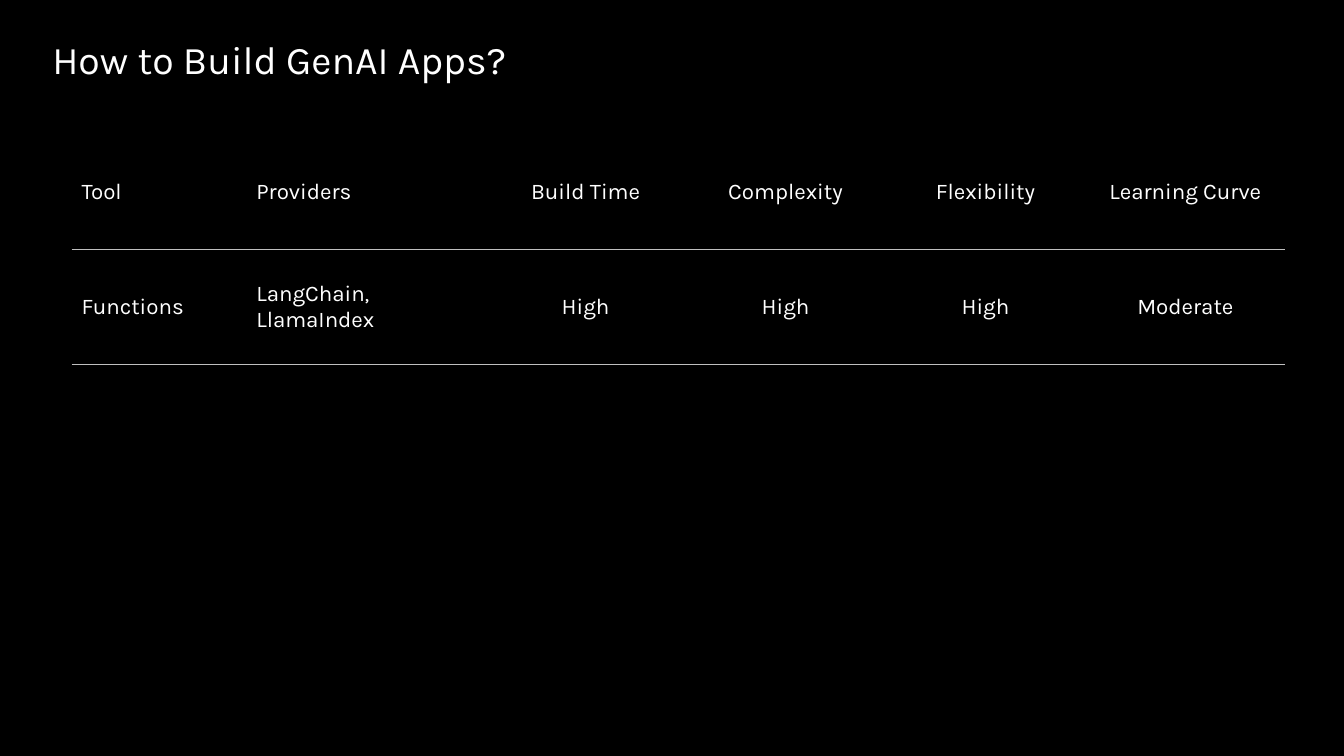
from lxml.etree import SubElement
from pptx import Presentation
from pptx.dml.color import RGBColor
from pptx.enum.text import MSO_ANCHOR, PP_ALIGN
from pptx.oxml.ns import qn
from pptx.util import Inches, Pt

BLACK = RGBColor(0x00, 0x00, 0x00)
WHITE = RGBColor(0xFF, 0xFF, 0xFF)
RULE_GRAY = RGBColor(0xBF, 0xBF, 0xBF)
FONT = "Karla"
NO_GRID_STYLE = "{2D5ABB26-0587-4C30-8999-92F81FD0307C}"

TOOL_ROWS = [
    ["Tool", "Providers", "Build Time", "Complexity", "Flexibility", "Learning Curve"],
    ["Functions", "LangChain, LlamaIndex", "High", "High", "High", "Moderate"],
]
ROW_COUNT = 5
LEFT_ALIGNED = 2
COLUMN_SHARES = [1.73, 2.37] + [1.98] * 4


def write_text(frame, text, size=16, color=WHITE, align=PP_ALIGN.LEFT):
    """Put one formatted line of text into a text frame."""
    paragraph = frame.paragraphs[0]
    paragraph.alignment = align
    run = paragraph.add_run()
    run.text = text
    run.font.name = FONT
    run.font.size = Pt(size)
    run.font.color.rgb = color


def add_rule(cell, side, color=RULE_GRAY, width=0.5):
    """Draw a border on one side of a cell, side being lnT or lnB."""
    properties = cell._tc.get_or_add_tcPr()
    border = SubElement(properties, qn(f"a:{side}"), w=str(Pt(width)))
    properties.insert(0, border)
    fill = SubElement(border, qn("a:solidFill"))
    SubElement(fill, qn("a:srgbClr"), val=str(color))


def add_title(slide, text, left, top, width, height):
    """Place the slide title in the given box."""
    title = slide.shapes.add_textbox(Inches(left), Inches(top), Inches(width), Inches(height))
    title.text_frame.word_wrap = True
    write_text(title.text_frame, text, size=28)


def add_tool_table(slide, left, top, width, height):
    """Place the tool comparison table in the given box."""
    frame = slide.shapes.add_table(
        ROW_COUNT, len(COLUMN_SHARES),
        Inches(left), Inches(top), Inches(width), Inches(height))
    table = frame.table
    table.first_row = table.horz_banding = False
    table._tbl.tblPr.find(qn("a:tableStyleId")).text = NO_GRID_STYLE
    for column, share in zip(table.columns, COLUMN_SHARES):
        column.width = Inches(width * share / sum(COLUMN_SHARES))
    for cell in table.iter_cells():
        cell.fill.background()
        cell.vertical_anchor = MSO_ANCHOR.MIDDLE
    for row, (texts, side) in enumerate(zip(TOOL_ROWS, ("lnB", "lnT"))):
        for column, text in enumerate(texts):
            cell = table.cell(row, column)
            align = PP_ALIGN.LEFT if column < LEFT_ALIGNED else PP_ALIGN.CENTER
            write_text(cell.text_frame, text, align=align)
            add_rule(cell, side)


def main():
    """Build the slide and save it."""
    deck = Presentation()
    deck.slide_width, deck.slide_height = Inches(13.33), Inches(7.5)
    slide = deck.slides.add_slide(deck.slide_layouts[6])
    slide.background.fill.solid()
    slide.background.fill.fore_color.rgb = BLACK
    add_title(slide, "How to Build GenAI Apps?", 0.42, 0.3, 11.48, 0.57)
    add_tool_table(slide, 0.71, 1.33, 12.04, 5.72)
    deck.save("out.pptx")


if __name__ == "__main__":
    main()
